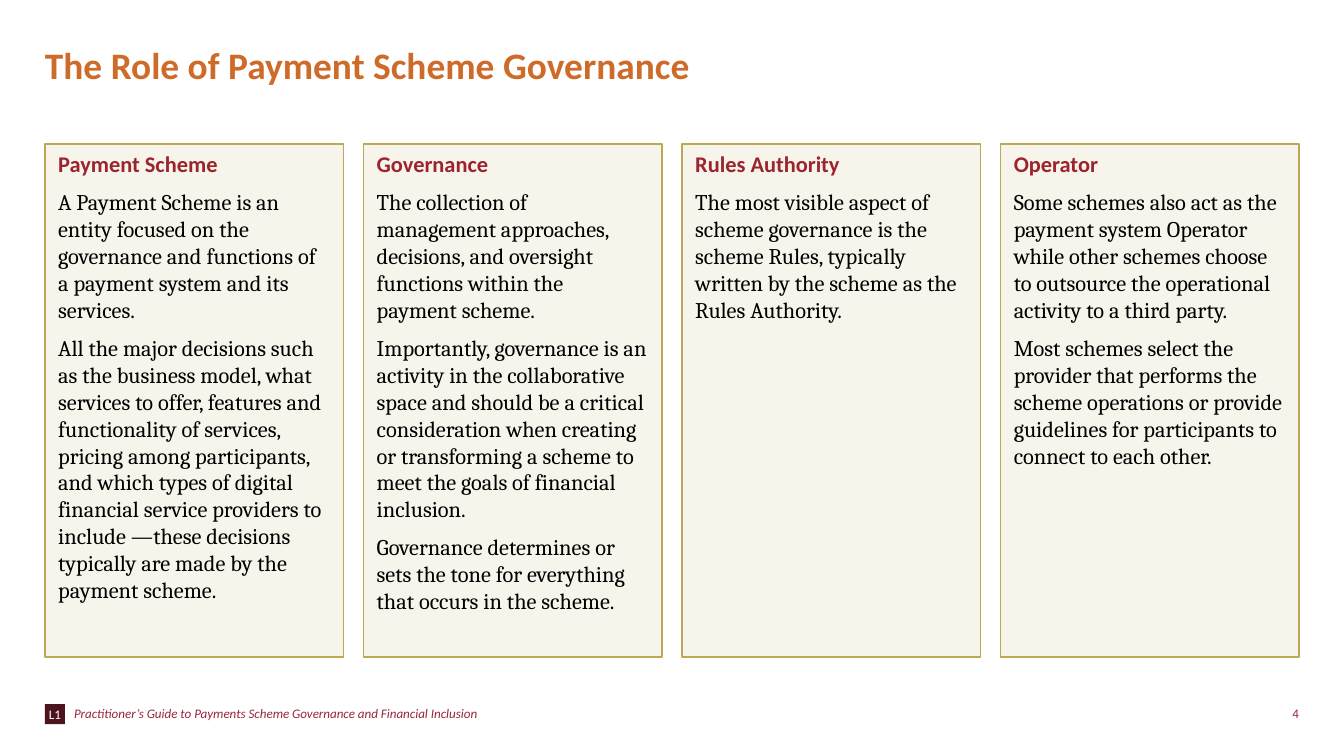
"""Build a slide with four cards on payment scheme governance."""

from dataclasses import dataclass

from pptx import Presentation
from pptx.dml.color import RGBColor
from pptx.enum.shapes import MSO_SHAPE
from pptx.enum.text import MSO_ANCHOR, MSO_AUTO_SIZE, PP_ALIGN
from pptx.util import Cm, Pt

TITLE = "The Role of Payment Scheme Governance"
CARDS = [
    ("Payment Scheme", [
        "A Payment Scheme is an entity focused on the governance and functions "
        "of a payment system and its services.",
        "All the major decisions such as the business model, what services to "
        "offer, features and functionality of services, pricing among "
        "participants, and which types of digital financial service providers "
        "to include —these decisions typically are made by the payment scheme.",
    ]),
    ("Governance", [
        "The collection of management approaches, decisions, and oversight "
        "functions within the payment scheme.",
        "Importantly, governance is an activity in the collaborative space and "
        "should be a critical consideration when creating or transforming a "
        "scheme to meet the goals of financial inclusion.",
        "Governance determines or sets the tone for everything that occurs in "
        "the scheme.",
    ]),
    ("Rules Authority", [
        "The most visible aspect of scheme governance is the scheme Rules, "
        "typically written by the scheme as the Rules Authority.",
    ]),
    ("Operator", [
        "Some schemes also act as the payment system Operator while other "
        "schemes choose to outsource the operational activity to a third party.",
        "Most schemes select the provider that performs the scheme operations "
        "or provide guidelines for participants to connect to each other.",
    ]),
]
BADGE = "L1"
FOOTER = "Practitioner’s Guide to Payments Scheme Governance and Financial Inclusion"
PAGE_NUMBER = "4"


@dataclass(frozen=True)
class Theme:
    heading_font: str = "Calibri"
    body_font: str = "Cambria"
    title_size: int = 20
    card_size: int = 12
    footer_size: int = 7
    title: str = "CE6B29"
    heading: str = "9B242D"
    body: str = "000000"
    card: str = "F7F5EB"
    border: str = "BAAA58"
    badge: str = "4C141D"
    badge_text: str = "FFFFFF"
    footer: str = "98273B"


THEME = Theme()
PAGE_WIDTH, PAGE_HEIGHT = 25.4, 14.29
MARGIN = 0.85
CARD_TOP, CARD_WIDTH, CARD_HEIGHT = 2.72, 5.64, 9.7
CARD_GAP = (PAGE_WIDTH - 2 * MARGIN - len(CARDS) * CARD_WIDTH) / (len(CARDS) - 1)


def style(paragraph, font_name, size, color, bold=False, italic=False,
          align=PP_ALIGN.LEFT):
    font = paragraph.font
    font.name, font.size = font_name, Pt(size)
    font.bold, font.italic = bold, italic
    font.color.rgb = RGBColor.from_string(color)
    paragraph.alignment = align


def set_line(shape, text, color, size=THEME.footer_size, **options):
    frame = shape.text_frame
    frame.text = text
    frame.word_wrap = True
    frame.auto_size = MSO_AUTO_SIZE.NONE
    frame.vertical_anchor = MSO_ANCHOR.MIDDLE
    frame.margin_left = frame.margin_right = 0
    frame.margin_top = frame.margin_bottom = 0
    style(frame.paragraphs[0], THEME.heading_font, size, color, **options)


def add_rectangle(page, left, top, width, height, fill):
    box = page.shapes.add_shape(
        MSO_SHAPE.RECTANGLE, Cm(left), Cm(top), Cm(width), Cm(height))
    box.shadow.inherit = False
    box.fill.solid()
    box.fill.fore_color.rgb = RGBColor.from_string(fill)
    box.line.fill.background()
    return box


def add_title(page):
    title = page.shapes.title
    title.left, title.top = Cm(MARGIN), Cm(0.79)
    title.width, title.height = Cm(23.27), Cm(0.86)
    set_line(title, TITLE, THEME.title, THEME.title_size, bold=True)


def add_card(page, index, heading, texts):
    left = MARGIN + index * (CARD_WIDTH + CARD_GAP)
    box = add_rectangle(page, left, CARD_TOP, CARD_WIDTH, CARD_HEIGHT, THEME.card)
    box.line.color.rgb = RGBColor.from_string(THEME.border)
    box.line.width = Pt(0.75)
    frame = box.text_frame
    frame.word_wrap = True
    frame.vertical_anchor = MSO_ANCHOR.TOP
    frame.text = "\n".join([heading, *texts])
    for paragraph in frame.paragraphs:
        style(paragraph, THEME.body_font, THEME.card_size, THEME.body)
        paragraph.space_after = Pt(6)
    style(frame.paragraphs[0], THEME.heading_font, THEME.card_size,
          THEME.heading, bold=True)


def add_footer(page):
    badge = add_rectangle(page, MARGIN, 13.31, 0.38, 0.38, THEME.badge)
    set_line(badge, BADGE, THEME.badge_text, align=PP_ALIGN.CENTER)
    number_width = 0.86
    number_left = PAGE_WIDTH - MARGIN - number_width
    for text, left, width, options in [
        (FOOTER, 1.4, 8.58, {"italic": True}),
        (PAGE_NUMBER, number_left, number_width, {"align": PP_ALIGN.RIGHT}),
    ]:
        box = page.shapes.add_textbox(Cm(left), Cm(13.34), Cm(width), Cm(0.3))
        set_line(box, text, THEME.footer, **options)


def main():
    deck = Presentation()
    deck.slide_width, deck.slide_height = Cm(PAGE_WIDTH), Cm(PAGE_HEIGHT)
    page = deck.slides.add_slide(deck.slide_layouts.get_by_name("Title Only"))
    add_title(page)
    for index, (heading, texts) in enumerate(CARDS):
        add_card(page, index, heading, texts)
    add_footer(page)
    deck.save("out.pptx")


if __name__ == "__main__":
    main()
